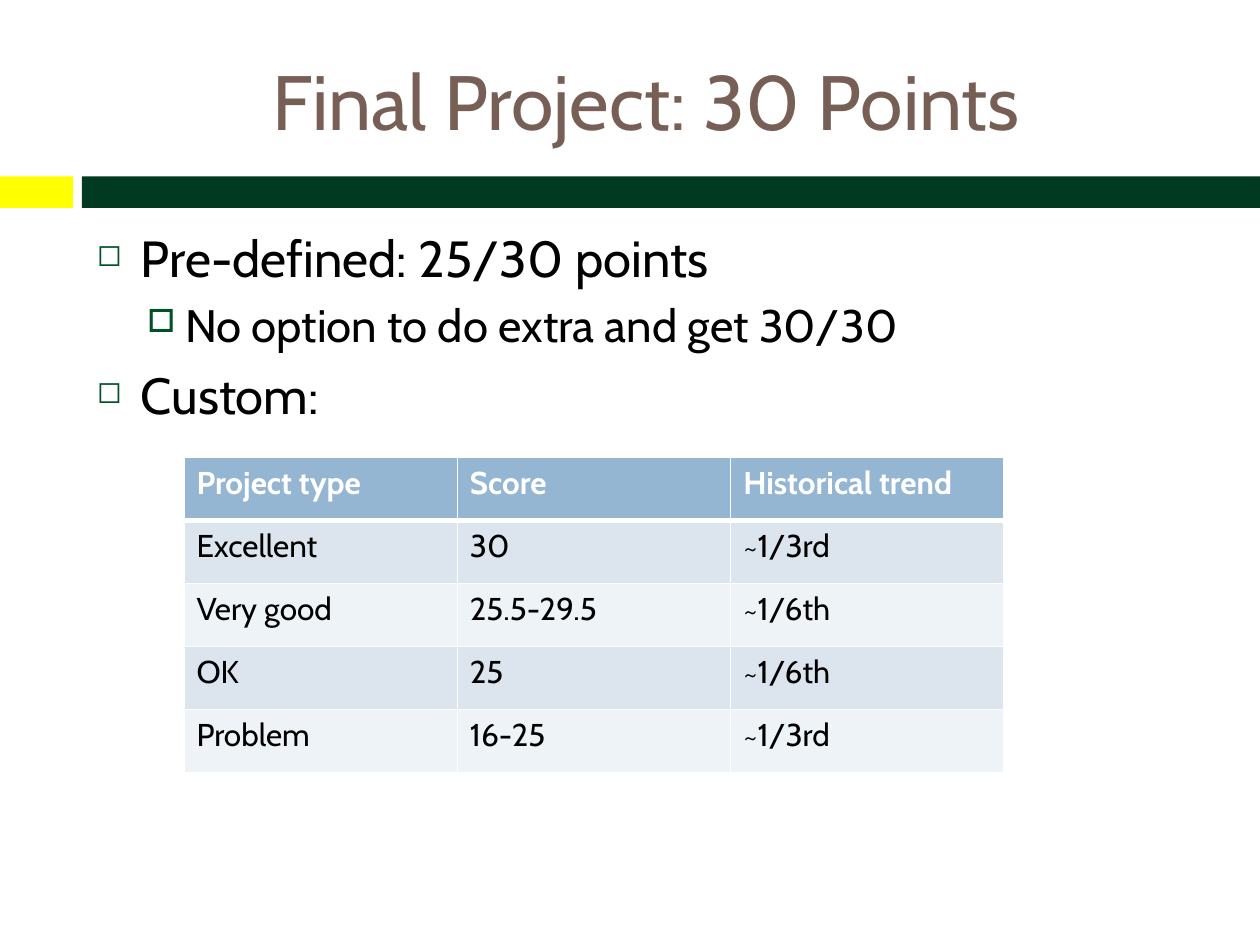
from dataclasses import dataclass

from lxml.etree import SubElement
from pptx import Presentation
from pptx.dml.color import RGBColor
from pptx.enum.shapes import MSO_SHAPE
from pptx.enum.text import MSO_ANCHOR, PP_ALIGN
from pptx.oxml.ns import qn
from pptx.util import Inches, Pt


@dataclass(frozen=True)
class Theme:
    font: str = "Cabin"
    title_color: str = "775F55"
    text_color: str = "000000"
    white: str = "FFFFFF"
    accent: str = "FFFF00"
    band: str = "003A20"
    bullet_color: str = "005128"
    header_fill: str = "94B6D2"
    row_fills: tuple = ("DCE5EE", "EEF3F7")
    title_size: int = 44
    table_size: int = 18


@dataclass(frozen=True)
class BulletLevel:
    size: int
    indent: float
    hanging: float
    space: float
    mark: str
    mark_percent: int


LEVELS = (
    BulletLevel(29, 0.35, 0.35, 7, "◻", 60),
    BulletLevel(26, 0.7, 0.3, 5.5, "□", 70),
)
POINTS = (
    (0, "Pre-defined: 25/30 points"),
    (1, "No option to do extra and get 30/30"),
    (0, "Custom:"),
)
SCORES = (
    ("Project type", "Score", "Historical trend"),
    ("Excellent", "30", "~1/3rd"),
    ("Very good", "25.5-29.5", "~1/6th"),
    ("OK", "25", "~1/6th"),
    ("Problem", "16-25", "~1/3rd"),
)


def apply_format(target, values):
    for name, value in values.items():
        setattr(target, name, value)


def add_solid_color(parent, color):
    fill = SubElement(parent, qn("a:solidFill"))
    SubElement(fill, qn("a:srgbClr"), val=color)


class SlideBuilder:
    def __init__(self, slide, theme):
        self.slide = slide
        self.theme = theme

    def style_font(self, font, size, color, bold=False):
        apply_format(font, {"name": self.theme.font, "size": Pt(size), "bold": bold})
        font.color.rgb = RGBColor.from_string(color)

    def bar(self, left, width, color):
        bar = self.slide.shapes.add_shape(
            MSO_SHAPE.RECTANGLE, Inches(left), Inches(1.4), Inches(width), Inches(0.25))
        bar.shadow.inherit = False
        bar.fill.solid()
        bar.fill.fore_color.rgb = RGBColor.from_string(color)
        bar.line.fill.background()

    def title(self, text, left, top, width, height):
        heading = self.slide.shapes.title
        apply_format(heading, {"left": Inches(left), "top": Inches(top),
                               "width": Inches(width), "height": Inches(height)})
        apply_format(heading.text_frame, {"text": text, "word_wrap": True,
                                          "vertical_anchor": MSO_ANCHOR.MIDDLE})
        paragraph = heading.text_frame.paragraphs[0]
        paragraph.alignment = PP_ALIGN.CENTER
        self.style_font(paragraph.runs[0].font, self.theme.title_size, self.theme.title_color)

    def bullets(self, points, left, top, width, height):
        frame = self.slide.shapes.add_textbox(
            Inches(left), Inches(top), Inches(width), Inches(height)).text_frame
        frame.word_wrap = True
        for index, (depth, text) in enumerate(points):
            level = LEVELS[depth]
            paragraph = frame.add_paragraph() if index else frame.paragraphs[0]
            properties = paragraph._p.get_or_add_pPr()
            properties.set("marL", str(Inches(level.indent)))
            properties.set("indent", str(-Inches(level.hanging)))
            mark_color = SubElement(properties, qn("a:buClr"))
            SubElement(mark_color, qn("a:srgbClr"), val=self.theme.bullet_color)
            SubElement(properties, qn("a:buSzPct"), val=str(level.mark_percent * 1000))
            SubElement(properties, qn("a:buChar"), char=level.mark)
            apply_format(paragraph, {"text": text, "level": depth,
                                     "space_before": Pt(level.space if index else 0)})
            self.style_font(paragraph.runs[0].font, level.size, self.theme.text_color)

    def borders(self, cell, row):
        properties = cell._tc.get_or_add_tcPr()
        widths = {"lnL": 1, "lnR": 1, "lnT": 3 if row == 1 else 1, "lnB": 1 if row else 3}
        for edge, width in widths.items():
            line = SubElement(properties, qn(f"a:{edge}"), w=str(Pt(width)))
            add_solid_color(line, self.theme.white)

    def table(self, rows, left, top, column_width, row_height):
        theme = self.theme
        columns = len(rows[0])
        table = self.slide.shapes.add_table(
            len(rows), columns, Inches(left), Inches(top),
            Inches(column_width * columns), Inches(row_height * len(rows))).table
        for row, texts in enumerate(rows):
            header = row == 0
            fill = theme.header_fill if header else theme.row_fills[(row - 1) % 2]
            color = theme.white if header else theme.text_color
            for column, text in enumerate(texts):
                cell = table.cell(row, column)
                cell.text = text
                self.borders(cell, row)
                cell.fill.solid()
                cell.fill.fore_color.rgb = RGBColor.from_string(fill)
                run = cell.text_frame.paragraphs[0].runs[0]
                self.style_font(run.font, theme.table_size, color, header)


def main():
    deck = Presentation()
    apply_format(deck, {"slide_width": Inches(10), "slide_height": Inches(7.5)})
    theme = Theme()
    builder = SlideBuilder(deck.slides.add_slide(deck.slide_layouts[5]), theme)
    builder.bar(0, 0.58, theme.accent)
    builder.bar(0.65, 9.35, theme.band)
    builder.title("Final Project: 30 Points", 0.67, 0.25, 8.92, 1.08)
    builder.bullets(POINTS, 0.67, 1.75, 8.92, 4.92)
    builder.table(SCORES, 1.46, 3.63, 2.17, 0.5)
    deck.save("out.pptx")


if __name__ == "__main__":
    main()
